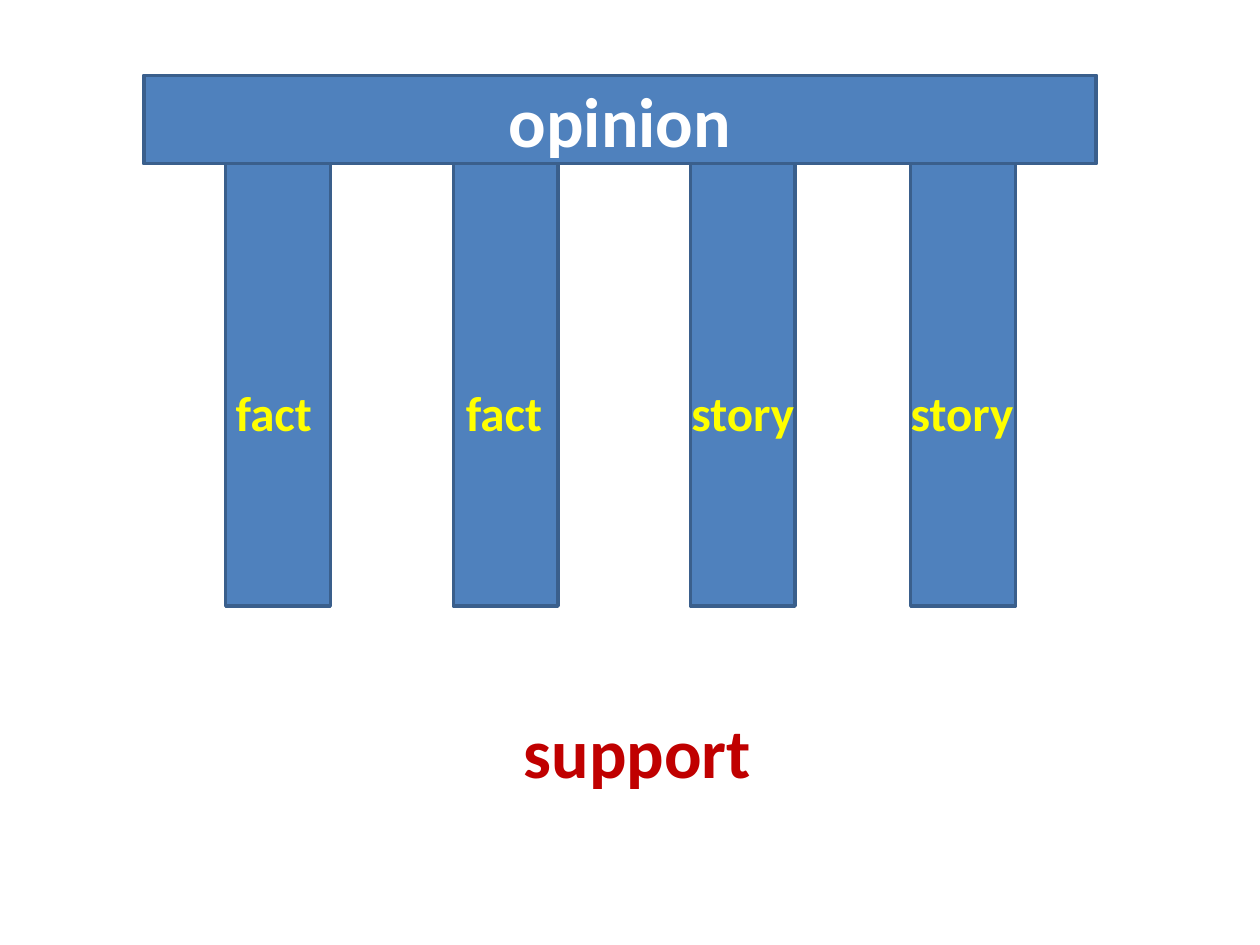
from pptx import Presentation
from pptx import util as u
from pptx.dml.color import RGBColor
from pptx.enum import shapes, text

COLORS = {
    "fill": "4F81BD",
    "line": "3A5F8C",
    "opinion": "FFFFFF",
    "label": "FFFF00",
    "support": "C00000",
}


def rgb(name):
    return RGBColor.from_string(COLORS[name])


def write(tf, words, *, size, color, align=text.PP_ALIGN.LEFT, font="Calibri", bold=True):
    p = tf.paragraphs[0]
    p.alignment = align
    r = p.add_run()
    r.text = words
    r.font.name = font
    r.font.size = u.Pt(size)
    r.font.bold = bold
    r.font.color.rgb = rgb(color)


class Slide:
    """The current slide and the style its elements share."""

    line_width = u.Pt(2)

    def __init__(self, s):
        self.s = s

    def block(self, x, y, w, h):
        sp = self.s.shapes.add_shape(
            shapes.MSO_SHAPE.RECTANGLE, u.Cm(x), u.Cm(y), u.Cm(w), u.Cm(h))
        sp.shadow.inherit = False
        sp.fill.solid()
        sp.fill.fore_color.rgb = rgb("fill")
        sp.line.color.rgb = rgb("line")
        sp.line.width = self.line_width
        return sp

    def label(self, words, x, y, w, h, **fmt):
        tf = self.s.shapes.add_textbox(u.Cm(x), u.Cm(y), u.Cm(w), u.Cm(h)).text_frame
        tf.word_wrap = False
        tf.auto_size = text.MSO_AUTO_SIZE.SHAPE_TO_FIT_TEXT
        write(tf, words, **fmt)


def main():
    prs = Presentation()
    prs.slide_width, prs.slide_height = u.Cm(25.4), u.Cm(19.05)
    slide = Slide(prs.slides.add_slide(prs.slide_layouts[6]))

    # Beam
    beam_top, beam_height = 1.52, 1.78
    beam = slide.block(2.9, beam_top, 19.2, beam_height)
    beam.text_frame.vertical_anchor = text.MSO_ANCHOR.MIDDLE
    write(beam.text_frame, "opinion", size=40, color="opinion",
          align=text.PP_ALIGN.CENTER)

    # Pillars: word, pillar left, label left, label width
    pillars = [
        ("fact", 4.55, 4.5, 2.08),
        ("fact", 9.14, 9.14, 2.08),
        ("story", 13.92, 13.69, 2.59),
        ("story", 18.36, 18.11, 2.59),
    ]
    for _, x, _, _ in pillars:
        slide.block(x, beam_top + beam_height, 2.11, 8.92)

    # Caption below and labels on the pillars
    slide.label("support", 10.31, 14.15, 5.16, 1.96, size=40, color="support")
    for word, _, x, w in pillars:
        slide.label(word, x, 7.59, w, 1.45, size=28, color="label")

    prs.save("out.pptx")


if __name__ == "__main__":
    main()
